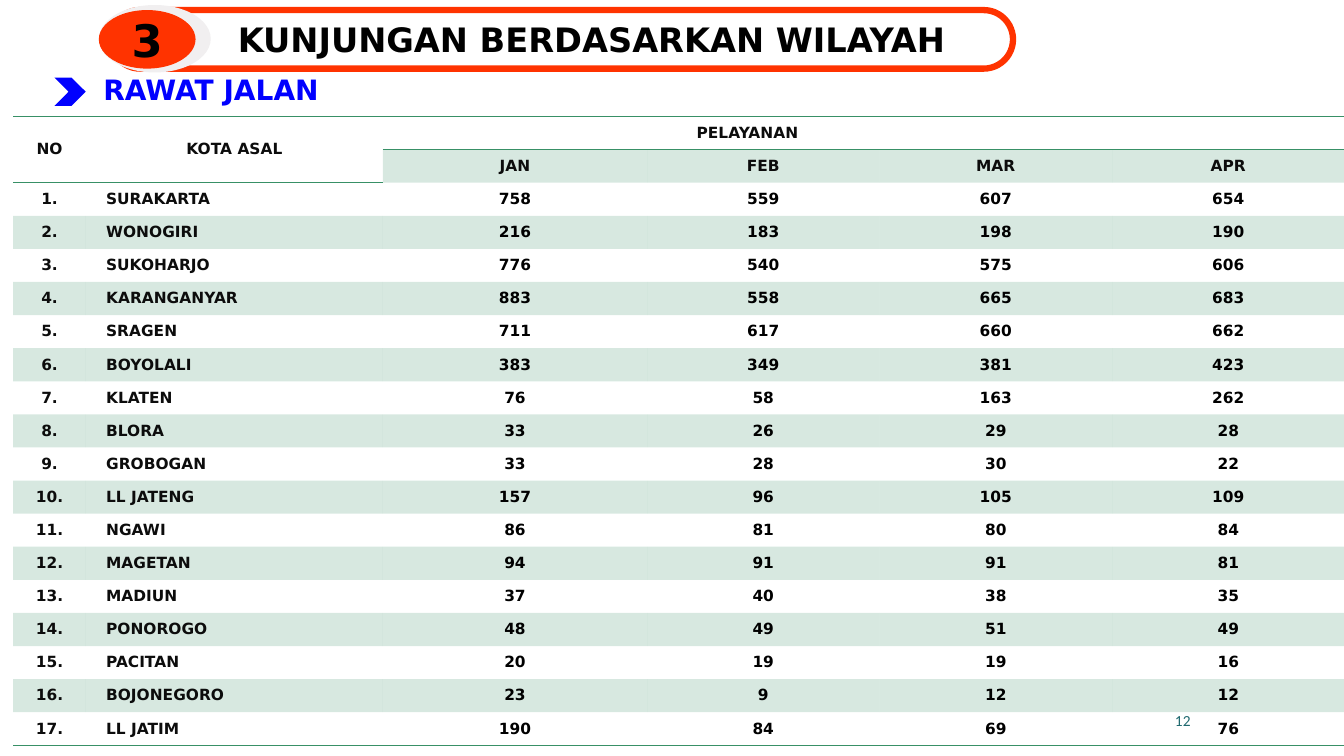
"""Build the slide of outpatient visits by region."""
import lxml.etree
import pptx
import pptx.dml.color
import pptx.enum.shapes
import pptx.enum.text
import pptx.oxml
import pptx.oxml.ns
import pptx.util

Pt = pptx.util.Pt
RGB = pptx.dml.color.RGBColor.from_string
qn = pptx.oxml.ns.qn
MIDDLE = pptx.enum.text.MSO_ANCHOR.MIDDLE
BOTTOM = pptx.enum.text.MSO_ANCHOR.BOTTOM
ALIGN = pptx.enum.text.PP_ALIGN
SHAPE = pptx.enum.shapes.MSO_SHAPE

COLORS = {"black": "000000", "ink": "0C0C0C", "green": "389066", "orange": "FF3300",
          "pale": "F1EFF0", "blue": "0000FF", "teal": "1F696F"}
FONT = "DejaVu Sans"
NO_STYLE = "{2D5ABB26-0587-4C30-8999-92F81FD0307C}"
VISITS = [
    ("SURAKARTA", 758, 559, 607, 654),
    ("WONOGIRI", 216, 183, 198, 190),
    ("SUKOHARJO", 776, 540, 575, 606),
    ("KARANGANYAR", 883, 558, 665, 683),
    ("SRAGEN", 711, 617, 660, 662),
    ("BOYOLALI", 383, 349, 381, 423),
    ("KLATEN", 76, 58, 163, 262),
    ("BLORA", 33, 26, 29, 28),
    ("GROBOGAN", 33, 28, 30, 22),
    ("LL JATENG", 157, 96, 105, 109),
    ("NGAWI", 86, 81, 80, 84),
    ("MAGETAN", 94, 91, 91, 81),
    ("MADIUN", 37, 40, 38, 35),
    ("PONOROGO", 48, 49, 51, 49),
    ("PACITAN", 20, 19, 19, 16),
    ("BOJONEGORO", 23, 9, 12, 12),
    ("LL JATIM", 190, 84, 69, 76),
]


def write(frame, text, size, color, align=ALIGN.CENTER, name=FONT, bold=True):
    paragraph = frame.paragraphs[0]
    paragraph.text = text
    paragraph.alignment = align
    for key, value in {"size": Pt(size), "name": name, "bold": bold}.items():
        setattr(paragraph.font, key, value)
    paragraph.font.color.rgb = RGB(COLORS[color])
    return paragraph


def add_border(cell, side):
    line = pptx.oxml.parse_xml(
        f'<a:{side} xmlns:a="http://schemas.openxmlformats.org/drawingml/2006/main" w="12700">'
        f'<a:solidFill><a:srgbClr val="{COLORS["green"]}"/></a:solidFill></a:{side}>')
    cell._tc.get_or_add_tcPr().insert(0, line)


deck = pptx.Presentation()
deck.slide_width, deck.slide_height = Pt(960), Pt(540)
slide = deck.slides.add_slide(deck.slide_layouts[5])
shapes = slide.shapes

title = shapes.title
for key, value in {"left": 113, "top": -8, "width": 619, "height": 54}.items():
    setattr(title, key, Pt(value))
title_format = {"vertical_anchor": BOTTOM, "word_wrap": True,
                "auto_size": pptx.enum.text.MSO_AUTO_SIZE.NONE}
for key, value in title_format.items():
    setattr(title.text_frame, key, value)
write(title.text_frame, "KUNJUNGAN BERDASARKAN WILAYAH", 24, "black").line_spacing = 0.9

rows = [("NO", "KOTA ASAL", "PELAYANAN", "", "", ""), ("", "", "JAN", "FEB", "MAR", "APR")]
rows += [(f"{number}.", *visits) for number, visits in enumerate(VISITS, 1)]
column_widths = [52, 212.2, 188.6, 166.1, 166.1, 166.1]
row_height = 23.65
table = shapes.add_table(len(rows), len(column_widths), Pt(9.4), Pt(83.2),
                         Pt(sum(column_widths)), Pt(row_height * len(rows))).table
table.first_row = table.horz_banding = False
table._tbl.tblPr.find(qn("a:tableStyleId")).text = NO_STYLE
for column, width in zip(table.columns, column_widths):
    column.width = Pt(width)

for row_index, values in enumerate(rows):
    table.rows[row_index].height = Pt(row_height)
    for column_index, value in enumerate(values):
        cell = table.cell(row_index, column_index)
        is_count = row_index > 1 and column_index > 1
        side_margin, end_margin = (0, 0) if is_count else (14.4, 5)
        cell_format = {"vertical_anchor": MIDDLE,
                       "margin_left": Pt(side_margin), "margin_right": Pt(side_margin),
                       "margin_top": Pt(end_margin), "margin_bottom": Pt(end_margin)}
        for key, setting in cell_format.items():
            setattr(cell, key, setting)
        is_city = row_index > 1 and column_index == 1
        write(cell.text_frame, str(value), 11, "black" if is_count else "ink",
              ALIGN.LEFT if is_city else ALIGN.CENTER)
        if row_index % 2 and (row_index > 1 or column_index > 1):
            cell.fill.solid()
            cell.fill.fore_color.rgb = RGB(COLORS["green"])
            tint = cell._tc.tcPr.find(".//" + qn("a:srgbClr"))
            lxml.etree.SubElement(tint, qn("a:alpha")).set("val", "20000")
        else:
            cell.fill.background()
        is_header_end = row_index == (1 if column_index < 2 else 0)
        if row_index in (0, len(rows) - 1) or is_header_end:
            add_border(cell, "lnB")
        if row_index == 0:
            add_border(cell, "lnT")

for first, last in [((0, 0), (1, 0)), ((0, 1), (1, 1)), ((0, 2), (0, 4))]:
    table.cell(*first).merge(table.cell(*last))

decorations = [
    (SHAPE.ROUNDED_RECTANGLE, 79.2, 7.2, 644.4, 41.8, None),
    (SHAPE.OVAL, 70.6, 3.6, 79.9, 48.2, "pale"),
    (SHAPE.OVAL, 70.6, 7.2, 69.1, 41.8, "orange"),
    (SHAPE.CHEVRON, 38.9, 55.4, 22.3, 20.2, "blue"),
]
drawn = []
for kind, left, top, width, height, color in decorations:
    shape = shapes.add_shape(kind, Pt(left), Pt(top), Pt(width), Pt(height))
    shape.shadow.inherit = False
    if color:
        shape.fill.solid()
        shape.fill.fore_color.rgb = RGB(COLORS[color])
        shape.line.fill.background()
    else:
        shape.fill.background()
        shape.line.color.rgb = RGB(COLORS["orange"])
        shape.line.width = Pt(4.5)
    drawn.append(shape)
title_frame, badge_rim, badge, arrow = drawn
title_frame.adjustments[0] = 0.5
badge.text_frame.vertical_anchor = MIDDLE
write(badge.text_frame, "3", 32, "black")

subtitle = shapes.add_textbox(Pt(61.9), Pt(48.2), Pt(177.8), Pt(31.7)).text_frame
subtitle.word_wrap = False
write(subtitle, "RAWAT JALAN", 20, "blue")

page_number = shapes.add_textbox(Pt(633.6), Pt(500.4), Pt(223.9), Pt(28.8)).text_frame
page_number.word_wrap = True
page_number.vertical_anchor = MIDDLE
write(page_number, "12", 11, "teal", ALIGN.RIGHT, "Calibri", False)

deck.save("out.pptx")
